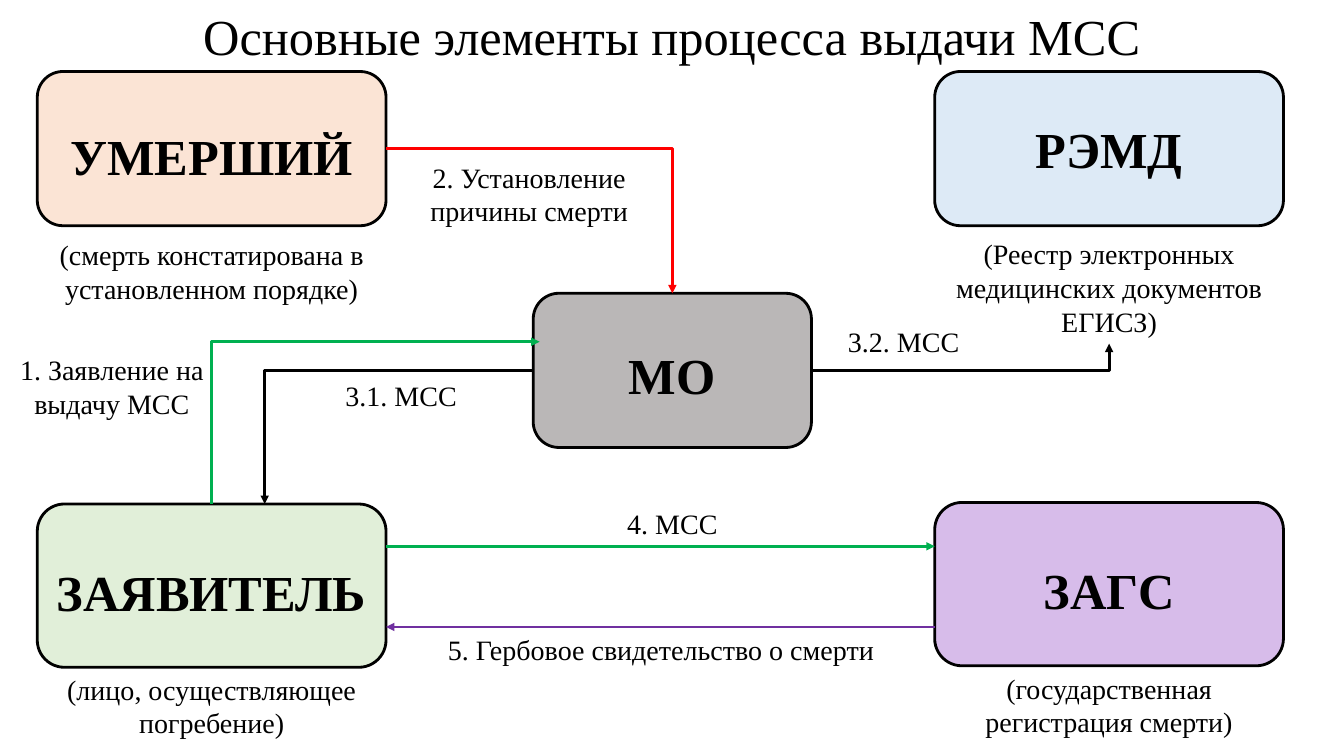
from pptx import Presentation
from pptx.dml.color import RGBColor
from pptx.enum.shapes import MSO_CONNECTOR, MSO_SHAPE
from pptx.enum.text import MSO_ANCHOR, MSO_AUTO_SIZE, PP_ALIGN
from pptx.oxml.ns import qn
from pptx.util import Inches, Pt
from lxml.etree import SubElement

COLUMNS, ROWS = 40, 30
BLACK, GREEN, RED, PURPLE = "000000", "00B050", "FF0000", "7030A0"


def rgb(code):
    return RGBColor.from_string(code)


class ProcessSlide:
    """Draws a process diagram on a grid of 40 columns by 30 rows."""

    font = "Times New Roman"
    heading_size, note_size, stroke = Pt(36), Pt(20), Pt(2)

    def __init__(self, deck):
        self.column = deck.slide_width / COLUMNS
        self.row = deck.slide_height / ROWS
        self.slide = deck.slides.add_slide(deck.slide_layouts[5])

    def place(self, column, row):
        return round(column * self.column), round(row * self.row)

    def set_text(self, frame, text, size, bold=False, anchor=MSO_ANCHOR.TOP):
        frame.text = text
        frame.word_wrap = True
        frame.auto_size = MSO_AUTO_SIZE.NONE
        frame.vertical_anchor = anchor
        paragraph = frame.paragraphs[0]
        paragraph.alignment = PP_ALIGN.CENTER
        paragraph.line_spacing = 1
        paragraph.space_before = Pt(0)
        paragraph.font.name = self.font
        paragraph.font.size = size
        paragraph.font.bold = bold
        paragraph.font.color.rgb = rgb(BLACK)

    def title(self, text, height):
        heading = self.slide.shapes.title
        heading.left, heading.top = self.place(0, 0)
        heading.width, heading.height = self.place(COLUMNS, height)
        self.set_text(heading.text_frame, text, self.heading_size)

    def participant(self, text, column, row, width, height, fill, drop):
        box = self.slide.shapes.add_shape(
            MSO_SHAPE.ROUNDED_RECTANGLE,
            *self.place(column, row), *self.place(width, height))
        box.shadow.inherit = False
        box.fill.solid()
        box.fill.fore_color.rgb = rgb(fill)
        solid = box._element.spPr.find(qn("a:solidFill"))
        SubElement(solid[0], qn("a:alpha"), val="50000")
        box.line.color.rgb = rgb(BLACK)
        box.line.width = self.stroke
        frame = box.text_frame
        self.set_text(frame, text, self.heading_size, True, MSO_ANCHOR.MIDDLE)
        frame.margin_left = frame.margin_right = frame.margin_bottom = 0
        frame.margin_top = round(2 * drop * self.row)

    def note(self, text, column, row, width, height):
        label = self.slide.shapes.add_textbox(
            *self.place(column, row), *self.place(width, height))
        self.set_text(label.text_frame, text, self.note_size)

    def arrow(self, start, end, color, arrowhead="a:tailEnd"):
        bent = start[0] != end[0] and start[1] != end[1]
        kind = MSO_CONNECTOR.ELBOW if bent else MSO_CONNECTOR.STRAIGHT
        flow = self.slide.shapes.add_connector(
            kind, *self.place(*start), *self.place(*end))
        flow.line.color.rgb = rgb(color)
        flow.line.width = self.stroke
        properties = flow._element.spPr
        if bent:
            properties.find(qn("a:prstGeom")).set("prst", "bentConnector2")
        SubElement(properties.find(qn("a:ln")), qn(arrowhead), type="triangle")
        SubElement(properties, qn("a:effectLst"))


def main():
    deck = Presentation()
    deck.slide_width, deck.slide_height = Inches(13.33), Inches(7.5)
    process = ProcessSlide(deck)

    left, right, side = 1.11, 27.82, 10.38
    middle, center = 15.87, 8.28
    top, upper, lower = 2.84, 6.12, 6.48
    one_line, two_lines, three_lines = 1.76, 3.08, 4.44
    left_edge, middle_edge = left + side, middle + center

    process.title("Основные элементы процесса выдачи МСС", top)

    for participant in (
        ("МО", middle, 11.64, center, upper, "767171", 0.16),
        ("УМЕРШИЙ", left, top, side, upper, "F8CBAD", 0.28),
        ("ЗАЯВИТЕЛЬ", left, 20, side, lower, "C5E0B4", 0.22),
        ("ЗАГС", right, 19.94, side, lower, "B07BD7", 0.22),
        ("РЭМД", right, top, side, upper, "BDD7EE", 0),
    ):
        process.participant(*participant)

    for start, end, color in (
        ((left_edge, 5.9), (20.01, 11.64), RED),
        ((middle, 14.7), (7.88, 20), BLACK),
        ((middle_edge, 14.7), (33.01, 13.64), BLACK),
        ((left_edge, 21.68), (right, 21.68), GREEN),
        ((right, 24.88), (left_edge, 24.88), PURPLE),
    ):
        process.arrow(start, end, color)
    process.arrow((16.06, 13.56), (6.3, 20), GREEN, "a:headEnd")

    for note in (
        ("(смерть констатирована в установленном порядке)",
         left, 9.24, side, two_lines),
        ("(Реестр электронных медицинских документов ЕГИСЗ)",
         right, 9.2, side, three_lines),
        ("(лицо, осуществляющее погребение)", left, 26.48, side, two_lines),
        ("(государственная регистрация смерти)",
         right, 26.44, side, two_lines),
        ("1. Заявление на выдачу МСС", -0.6, 13.8, 7.86, two_lines),
        ("2. Установление причины смерти", 11.82, 6.16, 7.86, two_lines),
        ("3.1. МСС", 8.01, 14.84, 7.86, one_line),
        ("3.2. МСС", middle_edge, 12.68, 5.49, one_line),
        ("4. МСС", 16.08, 19.92, 7.86, one_line),
        ("5. Гербовое свидетельство о смерти", 13, 24.92, 13.35, one_line),
    ):
        process.note(*note)

    deck.save("out.pptx")


if __name__ == "__main__":
    main()
